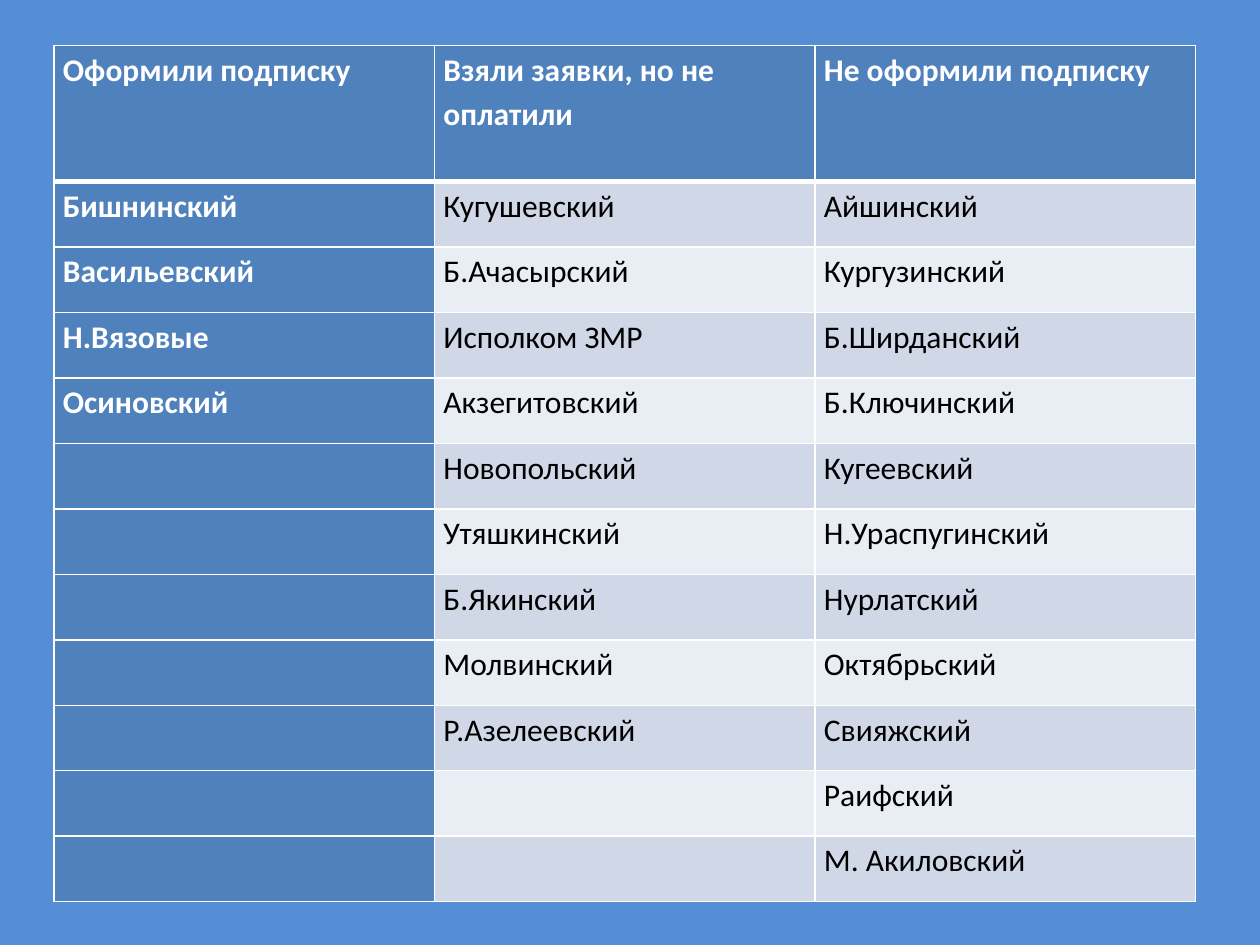
import dataclasses
import itertools

import pptx
import pptx.dml.color
import pptx.oxml.ns
import pptx.util
from lxml import etree
from pptx.util import Inches

WHITE, BLACK, BLUE, SKY = "FFFFFF", "000000", "4F81BD", "558ED5"
BANDS = ("D0D8E8", "E9EDF4")
HEAD, ROW, WIDTH = 1.08, 0.52, 3.02


@dataclasses.dataclass
class Column:
    head: str
    names: list[str]


COLUMNS = [
    Column("Оформили подписку",
           ["Бишнинский", "Васильевский", "Н.Вязовые", "Осиновский"]),
    Column("Взяли заявки, но не оплатили",
           ["Кугушевский", "Б.Ачасырский", "Исполком ЗМР", "Акзегитовский",
            "Новопольский", "Утяшкинский", "Б.Якинский", "Молвинский",
            "Р.Азелеевский"]),
    Column("Не оформили подписку",
           ["Айшинский", "Кургузинский", "Б.Ширданский", "Б.Ключинский",
            "Кугеевский", "Н.Ураспугинский", "Нурлатский", "Октябрьский",
            "Свияжский", "Раифский", "М. Акиловский"]),
]


def color(code: str) -> pptx.dml.color.RGBColor:
    return pptx.dml.color.RGBColor.from_string(code)


def border(cell, side: str, points: float) -> None:
    """Draw one white edge; call before the cell is filled."""
    qn = pptx.oxml.ns.qn
    props = cell._tc.get_or_add_tcPr()
    line = etree.SubElement(props, qn(f"a:ln{side}"),
                            w=str(pptx.util.Pt(points)))
    fill = etree.SubElement(line, qn("a:solidFill"))
    etree.SubElement(fill, qn("a:srgbClr"), val=WHITE)


def draw_cell(cell, text: str, row: int, col: int) -> None:
    strong = row == 0 or col == 0
    # Edges: a thick rule parts the heading from the names
    for side in "LRTB":
        thick = (row, side) in ((0, "B"), (1, "T"))
        border(cell, side, 3 if thick else 1)
    cell.fill.solid()
    cell.fill.fore_color.rgb = color(BLUE if strong else BANDS[(row - 1) % 2])
    cell.margin_left = cell.margin_right = Inches(0.07)
    cell.margin_top = cell.margin_bottom = 0

    # Text
    para = cell.text_frame.paragraphs[0]
    para.line_spacing = 1.15
    if text:
        run = para.add_run()
        run.text = text
        run.font.name = "Calibri"
        run.font.size = pptx.util.Pt(18)
        run.font.bold = strong
        run.font.color.rgb = color(WHITE if strong else BLACK)


def draw_table(slide, columns: list[Column]) -> None:
    count = max(len(column.names) for column in columns)
    frame = slide.shapes.add_table(
        count + 1, len(columns), Inches(0.43), Inches(0.36),
        Inches(WIDTH * len(columns)), Inches(HEAD + ROW * count))
    table = frame.table
    table.first_col = True
    for index, row in enumerate(table.rows):
        row.height = Inches(ROW if index else HEAD)
    lists = [[column.head, *column.names] for column in columns]
    for row, texts in enumerate(itertools.zip_longest(*lists, fillvalue="")):
        for col, text in enumerate(texts):
            draw_cell(table.cell(row, col), text, row, col)


def main() -> None:
    deck = pptx.Presentation()
    deck.slide_width, deck.slide_height = Inches(10), Inches(7.5)
    # The slide has no title, so it takes the blank layout
    slide = deck.slides.add_slide(deck.slide_layouts[6])
    slide.background.fill.solid()
    slide.background.fill.fore_color.rgb = color(SKY)
    draw_table(slide, COLUMNS)
    deck.save("out.pptx")


if __name__ == "__main__":
    main()
